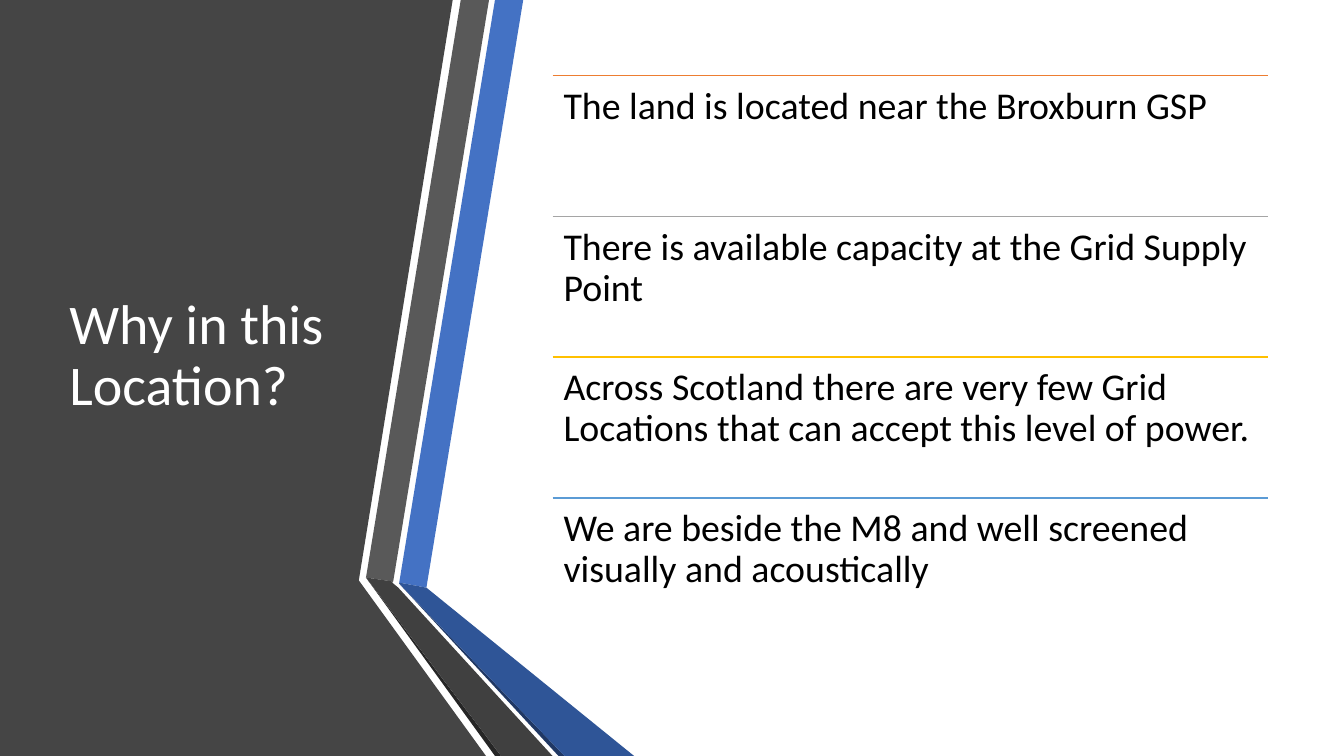
"""Build the slide on why the site was chosen: a folded ribbon, a title and ruled reasons."""
import dataclasses

import lxml.etree
import pptx
import pptx.dml.color
import pptx.enum.shapes
import pptx.enum.text
import pptx.oxml.ns
import pptx.util

PX = 9144


@dataclasses.dataclass(frozen=True)
class Theme:
    font: str = "Calibri"
    title_size: int = 40
    reason_size: int = 27
    rule_width: int = 1
    title: str = "FFFFFF"
    text: str = "000000"
    panel: str = "454545"
    blue: str = "4472C4"
    blue_fold: str = "2F5597"
    blue_edge: str = "203864"
    grey: str = "595959"
    grey_fold: str = "404040"
    grey_edge: str = "262626"


THEME = Theme()

RIBBON = [
    (THEME.panel, [(0, 0), (449, 0), (356, 575), (356, 576), (482, 750), (0, 750)]),
    (THEME.blue, [(396, 578), (423, 583), (519, 0), (491, 0)]),
    (THEME.grey, [(485, 0), (457, 0), (363, 573), (390, 577)]),
    (THEME.grey_edge, [(363, 573), (491, 750), (497, 750)]),
    (THEME.blue_edge, [(396, 579), (554, 750), (560, 750)]),
    (THEME.blue_fold, [(396, 579), (560, 750), (629, 750), (423, 583), (396, 578)]),
    (THEME.grey_fold, [(548, 750), (395, 583), (389, 578), (390, 577), (363, 573), (497, 750)]),
]

REASONS = [
    ("ED7D31", "The land is located near the Broxburn GSP"),
    ("A5A5A5", "There is available capacity at the Grid Supply Point"),
    ("FFC000", "Across Scotland there are very few Grid Locations that can accept this level of power."),
    ("5B9BD5", "We are beside the M8 and well screened visually and acoustically"),
]
REASON_LEFT, REASON_TOP, REASON_WIDTH, REASON_PITCH = 548, 75, 710, 139.6


def rgb(value):
    return pptx.dml.color.RGBColor.from_string(value)


def add_polygon(s, color, points):
    builder = s.shapes.build_freeform(*points[0], scale=PX)
    builder.add_line_segments(points[1:], close=True)
    sp = builder.convert_to_shape()
    sp.shadow.inherit = False
    sp.fill.solid()
    sp.fill.fore_color.rgb = rgb(color)
    sp.line.fill.background()


def add_text(s, box, text, size, color, inset, anchor):
    sp = s.shapes.add_textbox(*(v * PX for v in box))
    tf = sp.text_frame
    tf.word_wrap = True
    tf.vertical_anchor = anchor
    tf.margin_left = tf.margin_right = inset * PX
    tf.margin_top = tf.margin_bottom = inset * PX
    p = tf.paragraphs[0]
    p.line_spacing = 0.9
    r = p.add_run()
    r.text = text
    r.font.name = THEME.font
    r.font.size = pptx.util.Pt(size)
    r.font.color.rgb = rgb(color)


def add_rule(s, left, top, width, color):
    line = s.shapes.add_connector(
        pptx.enum.shapes.MSO_CONNECTOR.STRAIGHT,
        left * PX, top * PX, (left + width) * PX, top * PX)
    line.line.color.rgb = rgb(color)
    line.line.width = pptx.util.Pt(THEME.rule_width)
    lxml.etree.SubElement(line._element.spPr, pptx.oxml.ns.qn("a:effectLst"))


def add_reason(s, top, color, text):
    add_rule(s, REASON_LEFT, top, REASON_WIDTH, color)
    add_text(s, (REASON_LEFT, top, REASON_WIDTH, 140), text,
             THEME.reason_size, THEME.text, 11, pptx.enum.text.MSO_ANCHOR.TOP)


def main():
    prs = pptx.Presentation()
    prs.slide_width = 1333 * PX
    prs.slide_height = 750 * PX
    s = prs.slides.add_slide(prs.slide_layouts[6])
    for color, points in RIBBON:
        add_polygon(s, color, points)
    add_text(s, (59, 75, 304, 558), "Why in this Location?",
             THEME.title_size, THEME.title, 10, pptx.enum.text.MSO_ANCHOR.MIDDLE)
    for i, (color, text) in enumerate(REASONS):
        add_reason(s, REASON_TOP + round(i * REASON_PITCH), color, text)
    prs.save("out.pptx")


if __name__ == "__main__":
    main()
